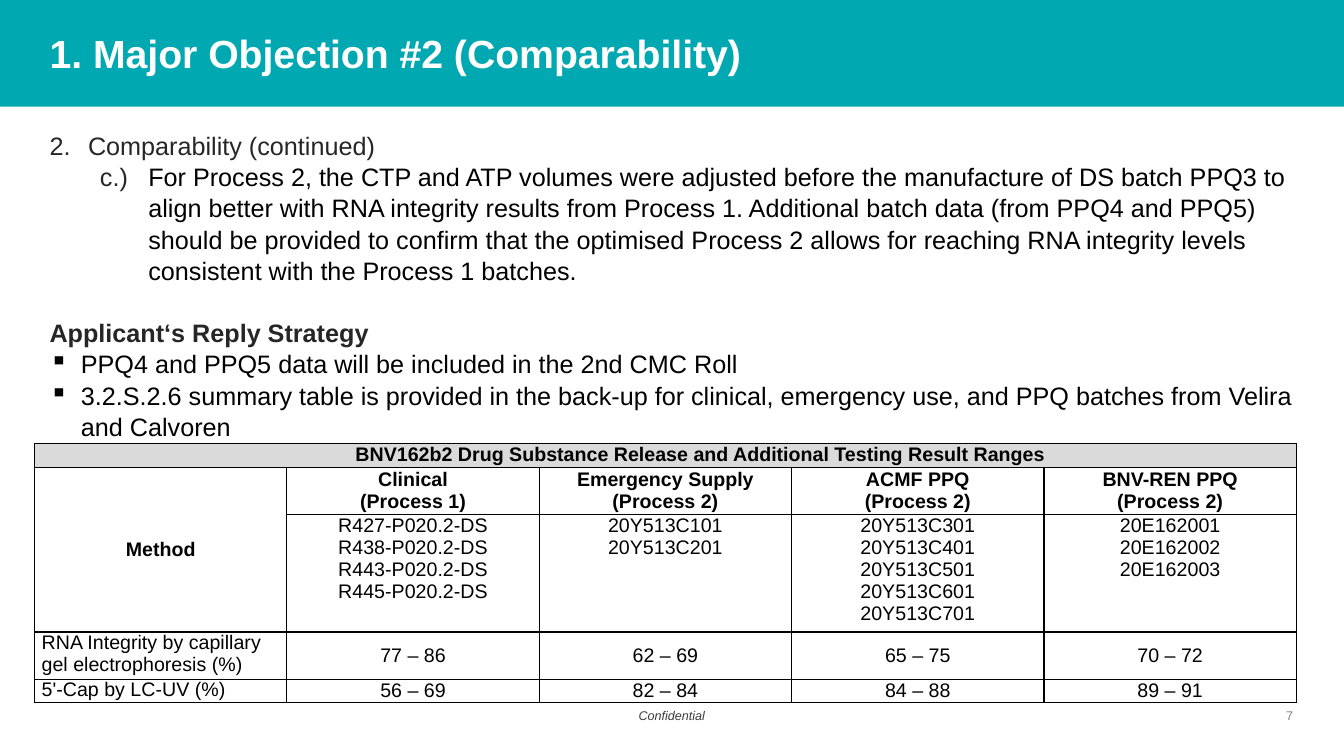
from pptx import Presentation
from pptx.dml.color import RGBColor
from pptx.enum.shapes import MSO_SHAPE as Preset
from pptx.enum.text import MSO_ANCHOR as Anchor, PP_ALIGN as Align
from pptx.oxml import parse_xml
from pptx.oxml.ns import nsdecls
from pptx.util import Cm, Pt

TEAL = RGBColor(0x00, 0xA8, 0xB1)
WHITE = RGBColor(0xFF, 0xFF, 0xFF)
BLACK = RGBColor(0x00, 0x00, 0x00)
CHARCOAL = RGBColor(0x26, 0x26, 0x26)
DARK_GREY = RGBColor(0x3C, 0x3C, 0x3C)
MID_GREY = RGBColor(0x80, 0x80, 0x80)
LIGHT_GREY = RGBColor(0xDA, 0xDA, 0xDA)

TABLE_TITLE = "BNV162b2 Drug Substance Release and Additional Testing Result Ranges"
HEADINGS = [
    ["Method"],
    ["Clinical", "(Process 1)"],
    ["Emergency Supply", "(Process 2)"],
    ["ACMF PPQ", "(Process 2)"],
    ["BNV-REN PPQ", "(Process 2)"],
]
BATCHES = [
    [],
    ["R427-P020.2-DS", "R438-P020.2-DS", "R443-P020.2-DS", "R445-P020.2-DS"],
    ["20Y513C101", "20Y513C201"],
    ["20Y513C301", "20Y513C401", "20Y513C501", "20Y513C601", "20Y513C701"],
    ["20E162001", "20E162002", "20E162003"],
]
RESULTS = [
    ["RNA Integrity by capillary gel electrophoresis (%)",
     "77 – 86", "62 – 69", "65 – 75", "70 – 72"],
    ["5'-Cap by LC‑UV (%)", "56 – 69", "82 – 84", "84 – 88", "89 – 91"],
]
LINES_PER_ROW = [1, 2, 5, 2, 1]
TABLE_LINE = 0.555


class Page:
    font = "Arial"

    def __init__(self, deck):
        self.slide = deck.slides.add_slide(deck.slide_layouts[6])
        self.shapes = self.slide.shapes

    def band(self, left, top, width, height, color):
        band = self.shapes.add_shape(
            Preset.RECTANGLE, Cm(left), Cm(top), Cm(width), Cm(height))
        band.shadow.inherit = False
        band.fill.solid()
        band.fill.fore_color.rgb = color
        band.line.fill.background()

    def span(self, para, text, size, color, bold=False, italic=False):
        span = para.add_run()
        span.text = text
        font = span.font
        font.name, font.size, font.bold, font.italic = self.font, Pt(size), bold, italic
        font.color.rgb = color

    def frame(self, left, top, width, height, anchor=Anchor.TOP, padded=True):
        box = self.shapes.add_textbox(Cm(left), Cm(top), Cm(width), Cm(height))
        frame = box.text_frame
        frame.word_wrap = True
        frame.vertical_anchor = anchor
        if not padded:
            frame.margin_left = frame.margin_right = 0
            frame.margin_top = frame.margin_bottom = 0
        return frame

    def label(self, frame, text, size, color, align=Align.LEFT, **style):
        para = frame.paragraphs[0]
        para.alignment = align
        self.span(para, text, size, color, **style)

    def body_para(self, frame, spans, indent=0, hanging=0, marker=None, before=0):
        """Each span is (text, color, bold); marker is the bullet markup."""
        first = not frame.paragraphs[0].runs
        para = frame.paragraphs[0] if first else frame.add_paragraph()
        properties = para._p.get_or_add_pPr()
        properties.set("marL", str(Cm(indent)))
        properties.set("indent", str(-Cm(hanging)))
        if marker:
            properties.append(parse_xml(marker))
        para.line_spacing = 1.04
        if before:
            para.space_before = Pt(before)
        for text, color, bold in spans:
            self.span(para, text, 18, color, bold=bold)

    def table(self, left, top, column_widths, row_heights):
        table = self.shapes.add_table(
            len(row_heights), len(column_widths), Cm(left), Cm(top),
            Cm(sum(column_widths)), Cm(sum(row_heights))).table
        table.first_row = table.horz_banding = False
        for column, width in zip(table.columns, column_widths):
            column.width = Cm(width)
        for row, height in zip(table.rows, row_heights):
            row.height = Cm(height)
        for cell in table.iter_cells():
            self.border(cell)
            cell.fill.background()
        return table

    def border(self, cell):
        properties = cell._tc.get_or_add_tcPr()
        for side in ("lnL", "lnR", "lnT", "lnB"):
            properties.append(parse_xml(
                f'<a:{side} {nsdecls("a")} w="{Pt(1)}"><a:solidFill>'
                f'<a:srgbClr val="{BLACK}"/></a:solidFill></a:{side}>'))

    def cell(self, cell, lines, bold=False, align=Align.CENTER, anchor=Anchor.MIDDLE):
        cell.margin_left = cell.margin_right = Cm(0.18)
        cell.margin_top = cell.margin_bottom = 0
        cell.vertical_anchor = anchor
        frame = cell.text_frame
        for number, line in enumerate(lines):
            para = frame.add_paragraph() if number else frame.paragraphs[0]
            para.alignment = align
            self.span(para, line, 14, BLACK, bold=bold)


def main():
    deck = Presentation()
    deck.slide_width, deck.slide_height = Cm(33.87), Cm(19.05)
    page = Page(deck)

    # Title band
    page.band(0, 0, 33.87, 2.69, TEAL)
    title = page.frame(1, 0.33, 31.8, 2, Anchor.MIDDLE)
    page.label(title, "1. Major Objection #2 (Comparability)", 28, WHITE, bold=True)

    # Objection and reply strategy
    number = f'<a:buAutoNum {nsdecls("a")} type="arabicPeriod" startAt="2"/>'
    square = f'<a:buChar {nsdecls("a")} char="▪"/>'
    body = page.frame(1, 3.12, 32, 9.5)
    page.body_para(body, [("Comparability (continued)", CHARCOAL, False)],
                   0.97, 0.97, number)
    page.body_para(body, [
        ("c.)\t", CHARCOAL, False),
        ("For Process 2, the CTP and ATP volumes were adjusted before the manufacture "
         "of DS batch PPQ3 to align better with RNA integrity results from Process 1. "
         "Additional batch data (from PPQ4 and PPQ5) should be provided to confirm that "
         "the optimised Process 2 allows for reaching RNA integrity levels consistent "
         "with the Process 1 batches.", BLACK, False)], 2.49, 1.22)
    page.body_para(body, [("Applicant‘s Reply Strategy", CHARCOAL, True)], before=21.6)
    for reply in (
            "PPQ4 and PPQ5 data will be included in the 2nd CMC Roll",
            "3.2.S.2.6 summary table is provided in the back-up for clinical, emergency "
            "use, and PPQ batches from Velira and Calvoren"):
        page.body_para(body, [(reply, BLACK, False)], 0.79, 0.79, square)

    # Result table
    table = page.table(0.87, 11.18, [6.36] * 5,
                       [TABLE_LINE * lines for lines in LINES_PER_ROW])
    heading = table.cell(0, 0)
    heading.merge(table.cell(0, 4))
    table.cell(1, 0).merge(table.cell(2, 0))
    page.cell(heading, [TABLE_TITLE], bold=True, anchor=Anchor.TOP)
    heading.margin_left = Cm(1.95)
    heading.fill.solid()
    heading.fill.fore_color.rgb = LIGHT_GREY
    for column, (names, batches) in enumerate(zip(HEADINGS, BATCHES)):
        page.cell(table.cell(1, column), names, bold=True)
        if batches:
            page.cell(table.cell(2, column), batches, anchor=Anchor.TOP)
    for row, (method, *ranges) in enumerate(RESULTS, start=3):
        page.cell(table.cell(row, 0), [method], align=Align.LEFT, anchor=Anchor.TOP)
        for column, value in enumerate(ranges, start=1):
            page.cell(table.cell(row, column), [value])

    # Footer
    footer = page.frame(13.26, 17.83, 7.34, 0.38, padded=False)
    page.label(footer, "Confidential", 9, DARK_GREY, Align.CENTER, italic=True)
    page_number = page.frame(25.25, 17.83, 7.34, 0.38, padded=False)
    page.label(page_number, "7", 9, MID_GREY, Align.RIGHT)

    deck.save("out.pptx")


if __name__ == "__main__":
    main()
